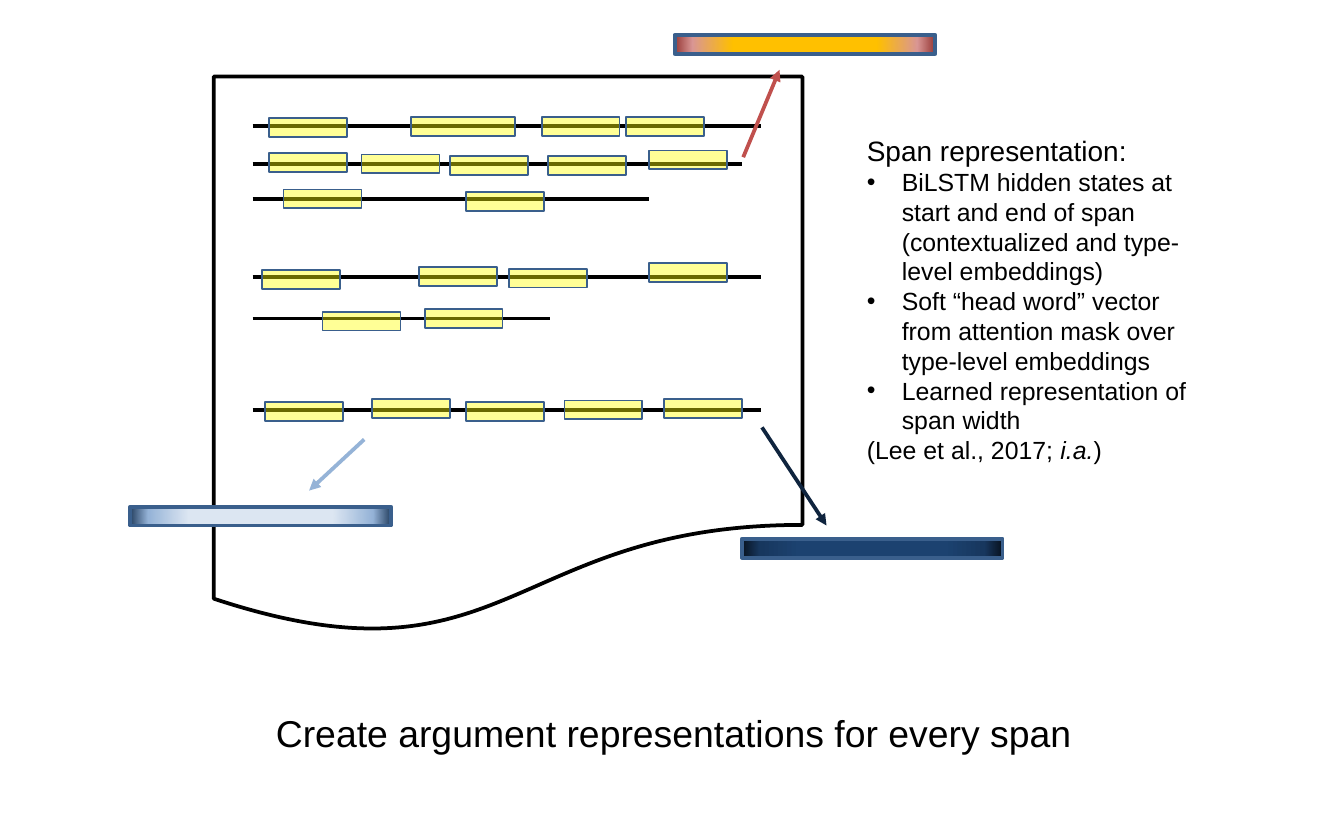
from dataclasses import dataclass

from lxml import etree
from pptx import Presentation
from pptx.dml.color import RGBColor
from pptx.enum.shapes import MSO_CONNECTOR, MSO_SHAPE
from pptx.enum.text import MSO_ANCHOR, MSO_AUTO_SIZE, PP_ALIGN
from pptx.oxml import parse_xml
from pptx.oxml.ns import nsdecls, qn
from pptx.util import Inches, Pt

STRAIGHT = MSO_CONNECTOR.STRAIGHT
RECT = MSO_SHAPE.RECTANGLE
DOCUMENT = MSO_SHAPE.FLOWCHART_DOCUMENT
TOP, MIDDLE = MSO_ANCHOR.TOP, MSO_ANCHOR.MIDDLE
LEFT, CENTER = PP_ALIGN.LEFT, PP_ALIGN.CENTER


@dataclass(frozen=True)
class Theme:
    font: str = "Arial"
    ink: str = "000000"
    outline: str = "3A5F8C"
    highlight: str = "FFFF00"
    highlight_alpha: int = 41
    thick: float = 2
    thin: float = 1
    caption_size: float = 20
    heading_size: float = 15
    body_size: float = 13.3


THEME = Theme()

SPAN_W, SPAN_H = 0.58, 0.14
WIDE_SPAN_W = 0.77
LINE_INSET = 0.29

# Text lines: drop from page top, length, spans as (offset along line, offset from line).
TEXT_LINES = [
    (0.37, 3.78, [(0.12, -0.06), (1.18, -0.07, WIDE_SPAN_W), (2.15, -0.07), (2.78, -0.07)]),
    (0.65, 3.64, [(0.12, -0.08), (0.81, -0.07), (1.47, -0.06), (2.2, -0.06), (2.95, -0.1)]),
    (0.91, 2.95, [(0.23, -0.07), (1.59, -0.05)]),
    (1.49, 3.78, [(0.07, -0.05), (1.24, -0.07), (1.91, -0.06), (2.95, -0.1)]),
    (1.8, 2.21, [(0.52, -0.05), (1.28, -0.07)]),
    (2.48, 3.78, [(0.09, -0.06), (0.89, -0.08), (1.59, -0.06), (2.32, -0.07), (3.06, -0.08)]),
]

# Vectors: box, gradient from centre to edge, arrow colour, arrow ends relative to the box.
VECTORS = [
    ((5.02, 0.26, 1.94, 0.14), ("FFC000", "D99694", "953735"),
     "C0504D", (0.51, 0.91), (0.78, 0.26)),
    ((5.52, 4.01, 1.94, 0.14), ("1C4270", "17375E", "08121F"),
     "0F243E", (0.15, -0.83), (0.63, -0.1)),
    ((0.97, 3.77, 1.94, 0.14), ("DCE6F2", "95B3D7", "254061"),
     "95B3D7", (1.74, -0.5), (1.33, -0.12)),
]
GRADIENT_STOPS = (55, 86, 100)

HEADING = "Span representation:"
POINTS = [
    "BiLSTM hidden states at start and end of span (contextualized and type-level embeddings)",
    "Soft “head word” vector from attention mask over type-level embeddings",
    "Learned representation of span width",
]
CITATION = [("(Lee et al., 2017; ", False), ("i.a.", True), (")", False)]


def rgb(color):
    return RGBColor.from_string(color)


def place(sp, box):
    sp.left, sp.top, sp.width, sp.height = map(Inches, box)


def add_outlined(s, kind, box, color, width):
    sp = s.shapes.add_shape(kind, *map(Inches, box))
    sp.shadow.inherit = False
    sp.fill.background()
    sp.line.color.rgb = rgb(color)
    sp.line.width = Pt(width)
    return sp


def add_line(s, start, end, color, arrow=False):
    line = s.shapes.add_connector(STRAIGHT, *map(Inches, (*start, *end)))
    line.line.color.rgb = rgb(color)
    line.line.width = Pt(THEME.thick)
    if arrow:
        etree.SubElement(line.line._get_or_add_ln(), qn("a:tailEnd"), type="triangle")
    etree.SubElement(line._element.spPr, qn("a:effectLst"))


def add_span(s, box):
    sp = add_outlined(s, RECT, box, THEME.outline, THEME.thin)
    sp.fill.solid()
    sp.fill.fore_color.rgb = rgb(THEME.highlight)
    color = sp._element.spPr.find(qn("a:solidFill"))[0]
    etree.SubElement(color, qn("a:alpha"), val=str(THEME.highlight_alpha * 1000))


def add_document(s, box):
    add_outlined(s, DOCUMENT, box, THEME.ink, THEME.thick)
    left = box[0] + LINE_INSET
    for drop, length, _ in TEXT_LINES:
        y = box[1] + drop
        add_line(s, (left, y), (left + length, y), THEME.ink)
    for drop, _, spans in TEXT_LINES:
        for dx, dy, *wide in spans:
            width = wide[0] if wide else SPAN_W
            add_span(s, (left + dx, box[1] + drop + dy, width, SPAN_H))


def add_vector(s, box, colors, arrow_color, start, end):
    """Draw a radially shaded bar and the arrow that leads to it."""
    sp = add_outlined(s, RECT, box, THEME.outline, THEME.thick)
    stops = "".join(
        f'<a:gs pos="{pos * 1000}"><a:srgbClr val="{color}"/></a:gs>'
        for pos, color in zip(GRADIENT_STOPS, colors))
    gradient = parse_xml(
        f'<a:gradFill {nsdecls("a")} rotWithShape="1"><a:gsLst>{stops}</a:gsLst>'
        '<a:path path="circle"><a:fillToRect l="50000" t="50000" r="50000" b="50000"/>'
        '</a:path></a:gradFill>')
    spPr = sp._element.spPr
    spPr.replace(spPr.find(qn("a:noFill")), gradient)
    ends = [(box[0] + x, box[1] + y) for x, y in (start, end)]
    add_line(s, *ends, arrow_color, arrow=True)


def format_runs(p, size, align):
    p.alignment = align
    p.space_before = Pt(0)
    for r in p.runs:
        r.font.name = THEME.font
        r.font.size = Pt(size)
        r.font.color.rgb = rgb(THEME.ink)


def set_bullet(p, bulleted):
    pPr = p._p.get_or_add_pPr()
    indent = Inches(0.26) if bulleted else 0
    pPr.set("marL", str(indent))
    pPr.set("indent", str(-indent))
    if bulleted:
        etree.SubElement(pPr, qn("a:buFont"), typeface=THEME.font)
        etree.SubElement(pPr, qn("a:buChar"), char="•")
    else:
        etree.SubElement(pPr, qn("a:buNone"))


def fill_caption(sp, box):
    place(sp, box)
    tf = sp.text_frame
    tf.text = "Create argument representations for every span"
    tf.word_wrap = False
    tf.auto_size = MSO_AUTO_SIZE.NONE
    tf.vertical_anchor = MIDDLE
    format_runs(tf.paragraphs[0], THEME.caption_size, CENTER)


def fill_notes(sp, box):
    """Fill the side list: heading, bullets and citation."""
    place(sp, box)
    tf = sp.text_frame
    tf.text = "\n".join([HEADING, *POINTS])
    tf.word_wrap = True
    tf.auto_size = MSO_AUTO_SIZE.NONE
    tf.vertical_anchor = TOP
    citation = tf.add_paragraph()
    for text, italic in CITATION:
        r = citation.add_run()
        r.text = text
        r.font.italic = italic
    for i, p in enumerate(tf.paragraphs):
        format_runs(p, THEME.body_size if i else THEME.heading_size, LEFT)
        set_bullet(p, 1 <= i <= len(POINTS))


def main():
    prs = Presentation()
    prs.slide_width, prs.slide_height = Inches(10), Inches(6.25)
    s = prs.slides.add_slide(prs.slide_layouts[1])
    add_document(s, (1.59, 0.57, 4.38, 4.16))
    fill_caption(s.shapes.title, (1.93, 5.23, 6.17, 0.44))
    fill_notes(s.placeholders[1], (6.35, 0.94, 2.58, 2.6))
    for vector in VECTORS:
        add_vector(s, *vector)
    prs.save("out.pptx")


if __name__ == "__main__":
    main()
